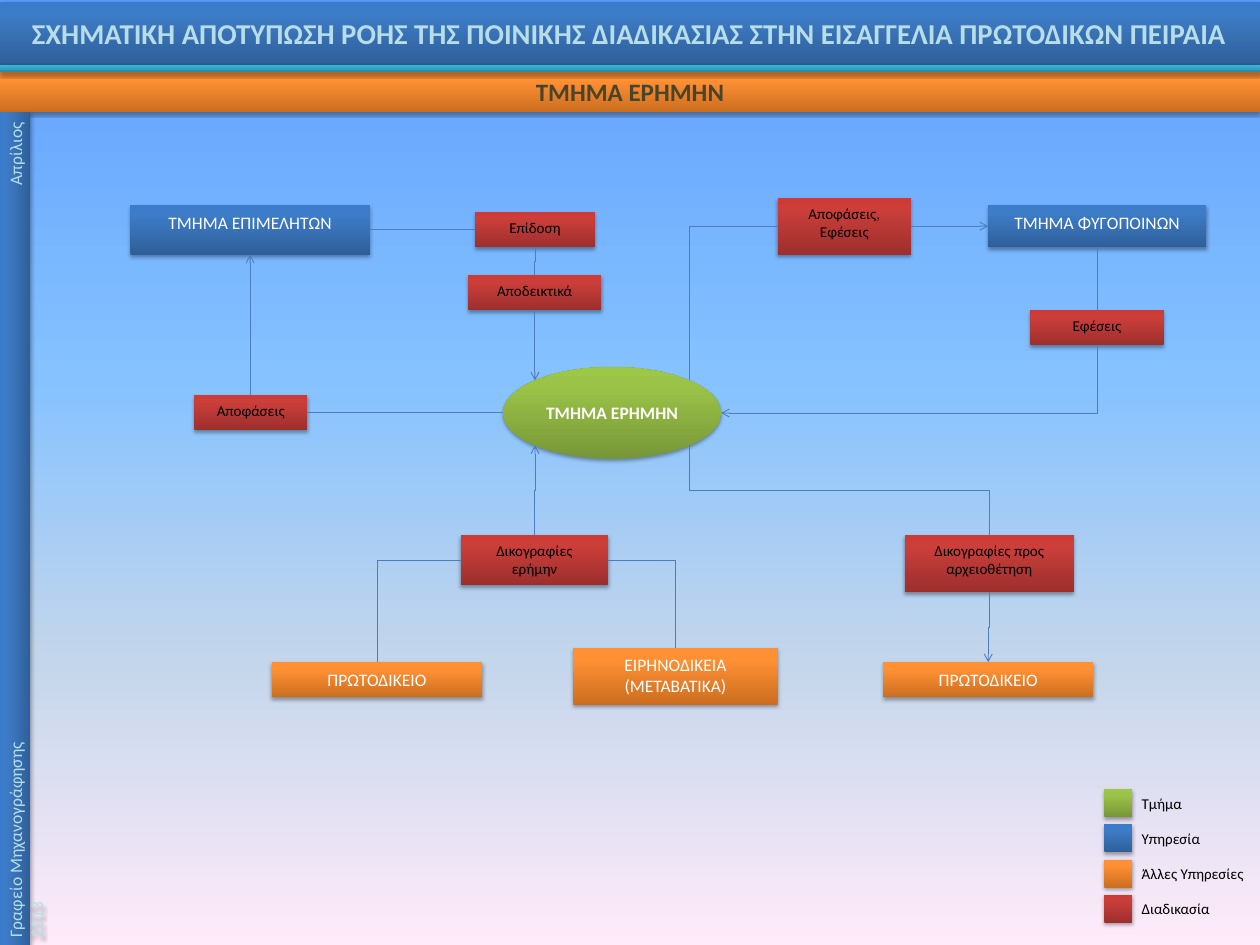
from lxml.etree import SubElement as Sub
from pptx import Presentation
from pptx.dml.color import RGBColor as Rgb
from pptx.enum.shapes import MSO_CONNECTOR as Con, MSO_SHAPE as Geo
from pptx.enum.text import MSO_ANCHOR as Anc, MSO_AUTO_SIZE as Auto, PP_ALIGN as Al
from pptx.oxml.ns import qn
from pptx.util import Cm, Pt

# Colours: gradients run from the dark edge to the light one
INK = {"white": "FFFFFF", "black": "000000", "olive": "4A452A",
       "pale": "B7DEE8", "line": "4B7EBC"}
GRAD = {
    "green": ("779737", "9BC348", "9DC746"),
    "blue": ("2F5F99", "3D7CC7", "3A7CCB"),
    "orange": ("CC6E20", "FF9034", "FF9136"),
    "red": ("9C2F2D", "CB3E3A", "CE3B37"),
    "teal": ("2A88A2", "37B1D2", "34B4D6"),
}
SKY = {0: "5E9EFF", 40: "85C2FF", 70: "C4D6EB", 100: "FFEBFA"}

# Content (centimetres)
WIDE, HIGH = 35.56, 26.67
TITLE = ("ΣΧΗΜΑΤΙΚΗ ΑΠΟΤΥΠΩΣΗ ΡΟΗΣ ΤΗΣ ΠΟΙΝΙΚΗΣ ΔΙΑΔΙΚΑΣΙΑΣ "
         "ΣΤΗΝ ΕΙΣΑΓΓΕΛΙΑ ΠΡΩΤΟΔΙΚΩΝ ΠΕΙΡΑΙΑ")
UNIT = "ΤΜΗΜΑ ΕΡΗΜΗΝ"
SIDE = "Γραφείο Μηχανογράφησης\tΑπρίλιος\v2013"
HUB = (14.2, 10.36, 6.15, 2.59)
NODES = {  # key: text, colour, left, top, width, height
    "fugitive": ("ΤΜΗΜΑ ΦΥΓΟΠΟΙΝΩΝ", "blue", 27.89, 5.79, 6.15, 1.19),
    "bailiff": ("ΤΜΗΜΑ ΕΠΙΜΕΛΗΤΩΝ", "blue", 3.68, 5.79, 6.76, 1.4),
    "court": ("ΠΡΩΤΟΔΙΚΕΙΟ", "orange", 7.67, 18.69, 5.94, 0.99),
    "peace": ("ΕΙΡΗΝΟΔΙΚΕΙΑ (ΜΕΤΑΒΑΤΙΚΑ)", "orange", 16.18, 18.29, 5.77, 1.6),
    "archive": ("ΠΡΩΤΟΔΙΚΕΙΟ", "orange", 24.92, 18.69, 5.94, 0.99),
    "appeal": ("Εφέσεις", "red", 29.08, 8.76, 3.76, 0.99),
    "ruling": ("Αποφάσεις", "red", 5.49, 11.15, 3.18, 0.99),
    "service": ("Επίδοση", "red", 13.41, 5.99, 3.38, 0.99),
    "proof": ("Αποδεικτικά", "red", 13.21, 7.77, 3.76, 0.99),
    "both": ("Αποφάσεις,\nΕφέσεις", "red", 21.95, 5.59, 3.76, 1.6),
    "brief": ("Δικογραφίες\nερήμην", "red", 13, 15.11, 4.17, 1.4),
    "filing": ("Δικογραφίες προς\nαρχειοθέτηση", "red", 25.53, 15.11, 4.78, 1.6),
}
LINKS = [  # from, side, to, side, arrow
    ("fugitive", "b", "appeal", "t", False),
    ("appeal", "b", "hub", "r", True),
    ("hub", "l", "ruling", "r", False),
    ("ruling", "t", "bailiff", "b", True),
    ("bailiff", "r", "service", "l", False),
    ("service", "b", "proof", "t", False),
    ("proof", "b", "hub", "nw", True),
    ("hub", "ne", "both", "l", False),
    ("both", "r", "fugitive", "l", True),
    ("court", "t", "brief", "l", False),
    ("peace", "t", "brief", "r", False),
    ("brief", "t", "hub", "sw", True),
    ("hub", "se", "filing", "t", False),
    ("filing", "b", "archive", "t", True),
]
KEY = [("Τμήμα", "green"), ("Υπηρεσία", "blue"),
       ("Άλλες Υπηρεσίες", "orange"), ("Διαδικασία", "red")]

# Sides as fractions of a box; diagonals lie on the ellipse
LOW = 0.146
SPOT = {"l": (0, 0.5), "r": (1, 0.5), "t": (0.5, 0), "b": (0.5, 1),
        "nw": (LOW, LOW), "ne": (1 - LOW, LOW),
        "sw": (LOW, 1 - LOW), "se": (1 - LOW, 1 - LOW)}

deck = Presentation()
deck.slide_width, deck.slide_height = Cm(WIDE), Cm(HIGH)
slide = deck.slides.add_slide(deck.slide_layouts[5])
shapes = slide.shapes


def blend(fill, root, stops, angle):
    fill.gradient()
    fill.gradient_angle = angle
    bag = next(root.iter(qn("a:gsLst")))
    for stop in list(bag):
        bag.remove(stop)
    for pos, hue in stops:
        stop = Sub(bag, qn("a:gs"), pos=str(pos * 1000))
        Sub(stop, qn("a:srgbClr"), val=hue)


def paint(shape, hue):
    """Gradient fill, no outline, soft shadow below."""
    props = shape._element.spPr
    blend(shape.fill, props, zip((0, 80, 100), GRAD[hue]), 90)
    shape.line.fill.background()
    shape.shadow.inherit = False
    shade = Sub(props.find(qn("a:effectLst")), qn("a:outerShdw"), blurRad="40000",
                dist="23000", dir="5400000", rotWithShape="0")
    tone = Sub(shade, qn("a:srgbClr"), val=INK["black"])
    Sub(tone, qn("a:alpha"), val="35000")


def write(shape, text, size, ink, bold=False, align=Al.CENTER, anchor=Anc.TOP,
          pad=(0.25, 0.13)):
    frame = shape.text_frame
    frame.text = text
    frame.word_wrap, frame.auto_size = True, Auto.NONE
    frame.vertical_anchor = anchor
    frame.margin_left = frame.margin_right = Cm(pad[0])
    frame.margin_top = frame.margin_bottom = Cm(pad[1])
    for para in frame.paragraphs:
        para.alignment = align
        for run in para.runs:
            font = run.font
            font.name, font.size, font.bold = "Calibri", Pt(size), bold
            font.color.rgb = Rgb.from_string(INK[ink])


def block(hue, box, geo=Geo.RECTANGLE):
    shape = shapes.add_shape(geo, *map(Cm, box))
    paint(shape, hue)
    return shape


def point(key, side):
    x, y, w, h = HUB if key == "hub" else NODES[key][2:]
    fx, fy = SPOT[side]
    return x + fx * w, y + fy * h


def link(src, out, dst, into, arrow):
    (x1, y1), (x2, y2) = point(src, out), point(dst, into)
    down = out not in "lr"
    if down:  # leaves vertically: lay out flat about the middle, then turn
        mx, my, dx, dy = (x1 + x2) / 2, (y1 + y2) / 2, (x2 - x1) / 2, (y2 - y1) / 2
        x1, y1, x2, y2 = mx - dy, my + dx, mx + dy, my - dx
    wire = shapes.add_connector(Con.ELBOW, Cm(x1), Cm(y1), Cm(x2), Cm(y2))
    props = wire._element.spPr
    if down:
        props.find(qn("a:xfrm")).set("rot", "5400000")
        if into in "lr":
            props.find(qn("a:prstGeom")).set("prst", "bentConnector2")
    wire.line.color.rgb = Rgb.from_string(INK["line"])
    wire.line.width = Pt(0.75)
    if arrow:
        Sub(props.find(qn("a:ln")), qn("a:tailEnd"), type="arrow")
    Sub(props, qn("a:effectLst"))


# Background
blend(slide.background.fill, slide._element, SKY.items(), 270)

# Hub and section band
write(block("green", HUB, Geo.OVAL), UNIT, 14, "white", True, anchor=Anc.MIDDLE)
write(block("orange", (0, 2.03, WIDE, 1.12)), UNIT, 20, "olive", True)

# Flow chart
for text, hue, *box in NODES.values():
    size, ink = (12, "black") if hue == "red" else (14, "white")
    write(block(hue, box), text, size, ink, pad=(0.36, 0.18))
for row in LINKS:
    link(*row)

# Legend
for i, (text, hue) in enumerate(KEY):
    top = 22.28 + 0.99 * i
    block(hue, (31.17, top, 0.79, 0.79))
    label = shapes.add_textbox(Cm(31.67), Cm(top), Cm(3.89), Cm(0.76))
    write(label, text, 12, "black", align=Al.LEFT)
    label.text_frame.margin_left, label.text_frame.margin_right = Cm(0.55), 0

# Title bar, brought in front of the chart
title = shapes.title
shapes._spTree.append(title._element)
title.left, title.top, title.width, title.height = map(Cm, (0, 0.05, WIDE, 1.78))
paint(title, "blue")
write(title, TITLE, 23, "pale", True, anchor=Anc.MIDDLE, pad=(0.36, 0.18))

# Side bar, read upwards, with the month at the far end
long, thin = 23.55, 0.86
side = block("blue", ((thin - long) / 2, 14.5, long, thin))
side.rotation = 270
write(side, SIDE, 14, "pale", align=Al.LEFT)
tabs = Sub(side.text_frame.paragraphs[0]._p.get_or_add_pPr(), qn("a:tabLst"))
Sub(tabs, qn("a:tab"), pos=str(Cm(long - 0.55)), algn="r")

# Rule under the title
block("teal", (0, 1.83, WIDE, 0.2))

deck.save("out.pptx")
